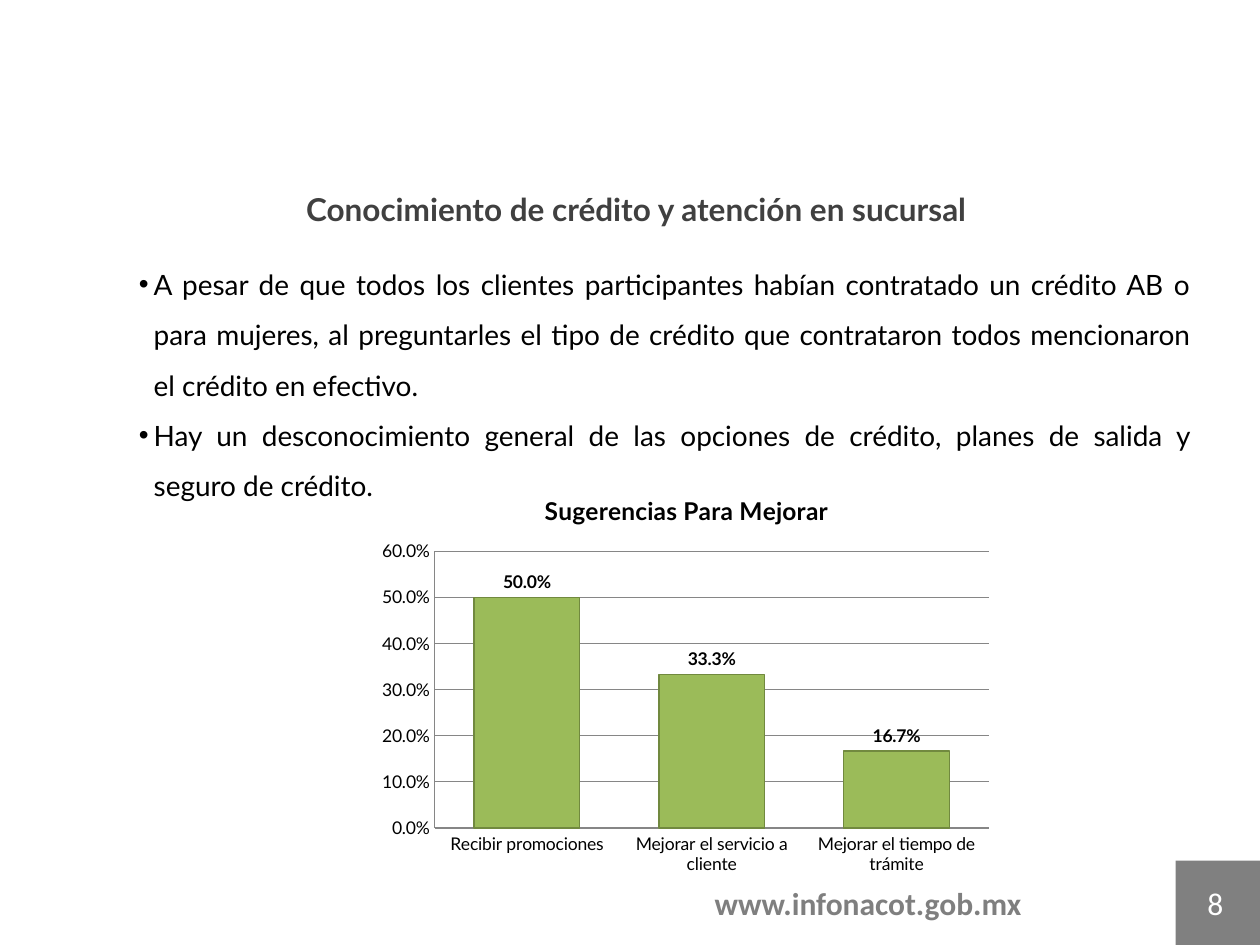
from dataclasses import dataclass

from lxml import etree
from pptx import Presentation
from pptx.chart.data import CategoryChartData
from pptx.dml.color import RGBColor
from pptx.enum.chart import XL_CHART_TYPE, XL_LABEL_POSITION, XL_TICK_MARK
from pptx.enum.shapes import MSO_SHAPE
from pptx.enum.text import MSO_ANCHOR, PP_ALIGN
from pptx.oxml import parse_xml
from pptx.oxml.ns import nsdecls, qn
from pptx.util import Cm, Pt

CENTER, JUSTIFY = PP_ALIGN.CENTER, PP_ALIGN.JUSTIFY
TOP, MIDDLE = MSO_ANCHOR.TOP, MSO_ANCHOR.MIDDLE
NO_TICK = XL_TICK_MARK.NONE


@dataclass(frozen=True)
class Theme:
    body_font: str = "Lato"
    footer_font: str = "Calibri"
    black: RGBColor = RGBColor(0, 0, 0)
    white: RGBColor = RGBColor(255, 255, 255)
    heading: RGBColor = RGBColor(0x40, 0x40, 0x40)
    footer: RGBColor = RGBColor(0x7F, 0x7F, 0x7F)
    block: RGBColor = RGBColor(0x80, 0x80, 0x80)
    axis: RGBColor = RGBColor(0x86, 0x86, 0x86)
    bar: RGBColor = RGBColor(0x9B, 0xBB, 0x59)
    bar_edge: RGBColor = RGBColor(0x71, 0x89, 0x3F)
    large: Pt = Pt(18)
    body: Pt = Pt(16)
    chart_title: Pt = Pt(14)
    chart_text: Pt = Pt(10)


theme = Theme()


def set_font(font, size, color, name=theme.body_font, bold=False):
    font.name, font.size, font.bold = name, size, bold
    font.color.rgb = color


def add_text(page, text, left, top, width, height, size=theme.large,
             color=theme.black, name=theme.body_font, bold=False,
             align=CENTER, anchor=TOP, spacing=None, bullet=False):
    box = page.shapes.add_textbox(Cm(left), Cm(top), Cm(width), Cm(height))
    frame = box.text_frame
    frame.word_wrap = True
    frame.vertical_anchor = anchor
    frame.text = text
    for para in frame.paragraphs:
        para.alignment = align
        if spacing:
            para.line_spacing = spacing
        if bullet:
            props = para._p.get_or_add_pPr()
            props.set("marL", str(Cm(0.79)))
            props.set("indent", str(Cm(-0.3)))
            etree.SubElement(props, qn("a:buFont"), typeface="Arial")
            etree.SubElement(props, qn("a:buChar"), char="•")
        for span in para.runs:
            set_font(span.font, size, color, name, bold)


deck = Presentation()
deck.slide_width, deck.slide_height = Cm(25.4), Cm(19.05)
page = deck.slides.add_slide(deck.slide_layouts[6])

# Footer: web address and page number
add_text(page, "www.infonacot.gob.mx", 11.3, 17.7, 12.4, 1.02,
         color=theme.footer, name=theme.footer_font, bold=True)
block = page.shapes.add_shape(MSO_SHAPE.RECTANGLE, Cm(23.7), Cm(17.35), Cm(1.7), Cm(1.7))
block.shadow.inherit = False
block.fill.solid()
block.fill.fore_color.rgb = theme.block
block.line.fill.background()
add_text(page, "8", 23.7, 17.35, 1.6, 1.7, color=theme.white,
         name=theme.footer_font, anchor=MIDDLE)

# Heading and findings
add_text(page, "Conocimiento de crédito y atención en sucursal",
         4.62, 3.71, 16.41, 1.02, color=theme.heading, bold=True)
findings = [
    "A pesar de que todos los clientes participantes habían contratado un "
    "crédito AB o para mujeres, al preguntarles el tipo de crédito que "
    "contrataron todos mencionaron el crédito en efectivo.",
    "Hay un desconocimiento general de las opciones de crédito, planes de "
    "salida y seguro de crédito.",
]
add_text(page, "\n".join(findings), 2.06, 4.93, 22.2, 5.38, size=theme.body,
         align=JUSTIFY, spacing=1.5, bullet=True)

# Suggestions chart
data = CategoryChartData(number_format="0.0%")
data.categories = ["Recibir promociones", "Mejorar el servicio a cliente",
                   "Mejorar el tiempo de trámite"]
data.add_series("Sugerencias", [0.5, 0.333, 0.167])
chart = page.shapes.add_chart(XL_CHART_TYPE.COLUMN_CLUSTERED, Cm(7.49), Cm(9.53),
                              Cm(12.7), Cm(8.33), data).chart
set_font(chart.font, theme.chart_text, theme.black)
chart.has_legend = False
chart.has_title = True
chart.chart_title.include_in_layout = False
title = chart.chart_title.text_frame
title.text = "Sugerencias Para Mejorar"
set_font(title.paragraphs[0].runs[0].font, theme.chart_title, theme.black, bold=True)

# Axes and gridlines
values = chart.value_axis
values.minimum_scale, values.maximum_scale, values.major_unit = 0, 0.6, 0.1
values.tick_labels.number_format = "0.0%"
values.tick_labels.number_format_is_linked = False
for axis in (chart.category_axis, values):
    axis.major_tick_mark = axis.minor_tick_mark = NO_TICK
for line in (chart.category_axis.format.line, values.format.line,
             values.major_gridlines.format.line):
    line.color.rgb = theme.axis
    line.width = Pt(0.75)

# Columns and their labels
plot = chart.plots[0]
plot.gap_width = 75
plot.vary_by_categories = False
bars = plot.series[0].format
bars.fill.solid()
bars.fill.fore_color.rgb = theme.bar
bars.line.color.rgb = theme.bar_edge
bars.line.width = Pt(0.75)
plot.has_data_labels = True
labels = plot.data_labels
labels.show_value = True
labels.number_format = "0.0%"
labels.number_format_is_linked = False
labels.position = XL_LABEL_POSITION.OUTSIDE_END
set_font(labels.font, theme.chart_text, theme.black, bold=True)

# Plot area as shares of the chart frame
layout = parse_xml(f"<c:layout {nsdecls('c')}><c:manualLayout/></c:layout>")
settings = {"layoutTarget": "inner", "xMode": "edge", "yMode": "edge",
            "x": 0.1, "y": 0.19, "w": 0.88, "h": 0.67}
for tag, value in settings.items():
    etree.SubElement(layout[0], qn(f"c:{tag}"), val=str(value))
area = chart._chartSpace.chart.plotArea
for old in area.findall(qn("c:layout")):
    area.remove(old)
area.insert(0, layout)

deck.save("out.pptx")
